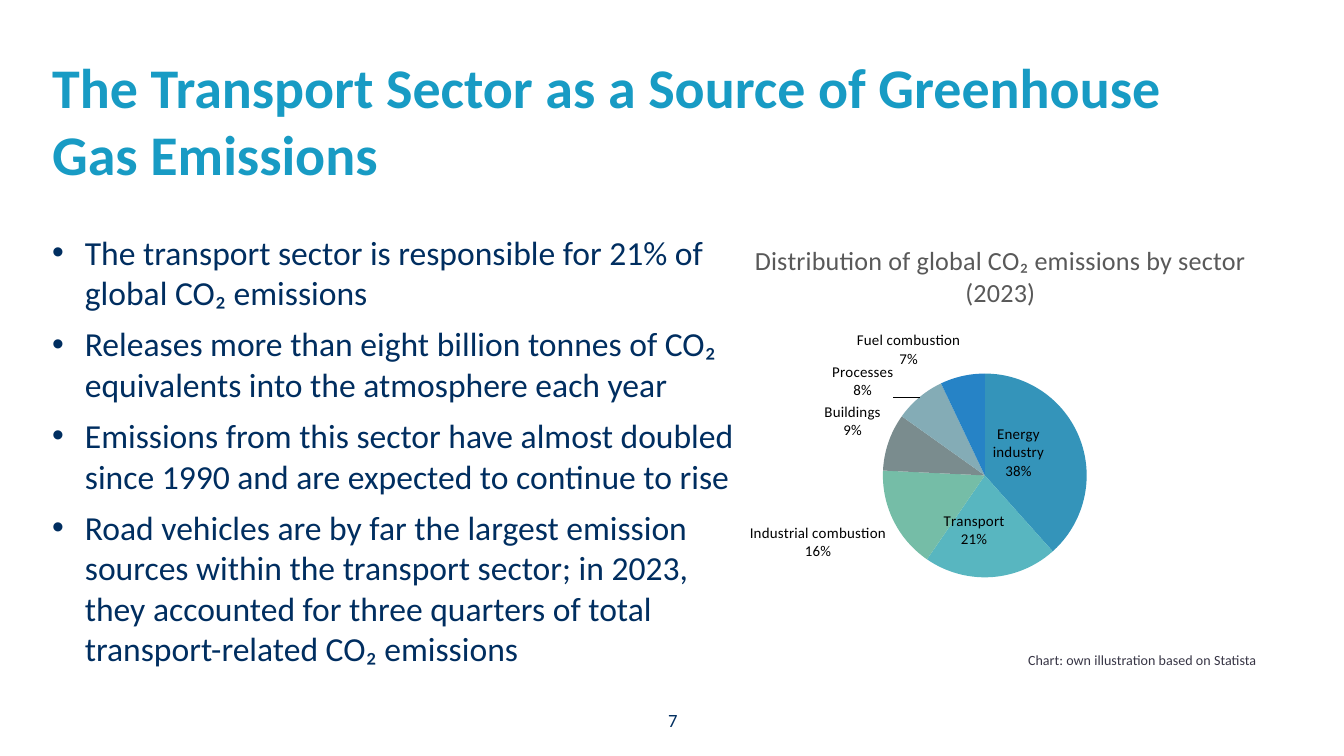
from lxml import etree
from pptx import Presentation
from pptx.chart.data import CategoryChartData
from pptx.dml.color import RGBColor
from pptx.enum import chart as charts, text
from pptx.oxml import parse_xml
from pptx.oxml.ns import nsdecls, qn
from pptx.util import Pt

COLORS = {"title": "189BC4", "body": "002E60", "credit": "373545",
          "heading": "595959", "label": "000000"}
SECTORS = [
    ("Energy industry", 38, "3494BA"),
    ("Transport", 21, "58B6C0"),
    ("Industrial combustion", 16, "75BDA7"),
    ("Buildings", 9, "7A8C8E"),
    ("Processes", 8, "84ACB6"),
    ("Fuel combustion", 7, "2683C6"),
    ("Other sectors", 0, "1F5970"),
]
LABEL_SHIFTS = [(0, -0.02, -0.01, "ctr"), (1, -0.02, 0.01, "ctr"),
                (4, -0.03, 0.02, "outEnd"), (6, 0.22, 0.02, "outEnd")]
LABEL_FLAGS = ('<c:showLegendKey val="0"/><c:showVal val="0"/><c:showCatName val="1"/>'
               '<c:showSerName val="0"/><c:showPercent val="1"/><c:showBubbleSize val="0"/>'
               '<c:separator>\n</c:separator>')


def style(font, size, color, bold=False):
    font.name = "Calibri"
    font.size = Pt(size)
    font.bold = bold
    font.color.rgb = RGBColor.from_string(COLORS[color])


def add_text(box, lines, size, color, bold=False, align=text.PP_ALIGN.LEFT,
             anchor=text.MSO_ANCHOR.TOP, insets=(0, 0)):
    frame = slide.shapes.add_textbox(*map(Pt, box)).text_frame
    frame.word_wrap = True
    frame.vertical_anchor = anchor
    frame.margin_left = frame.margin_right = Pt(insets[0])
    frame.margin_top = frame.margin_bottom = Pt(insets[1])
    frame.text = "\n".join(lines)
    for paragraph in frame.paragraphs:
        paragraph.alignment = align
        for run in paragraph.runs:
            style(run.font, size, color, bold)
    return frame


prs = Presentation()
prs.slide_width, prs.slide_height = Pt(720), Pt(405)
slide = prs.slides.add_slide(prs.slide_layouts[6])

add_text((28, 28, 595.5, 73.5),
         ["The Transport Sector as a Source of Greenhouse Gas Emissions"],
         30, "title", bold=True)

findings = add_text((28, 124, 376.5, 245), [
    "The transport sector is responsible for 21% of global CO₂ emissions",
    "Releases more than eight billion tonnes of CO₂ equivalents into the atmosphere each year",
    "Emissions from this sector have almost doubled since 1990 and are expected to continue to rise",
    "Road vehicles are by far the largest emission sources within the transport sector; "
    "in 2023, they accounted for three quarters of total transport-related CO₂ emissions",
], 18, "body")
for index, finding in enumerate(findings.paragraphs):
    properties = finding._p.get_or_add_pPr()
    properties.set("marL", str(Pt(17.5)))
    properties.set("indent", str(-Pt(17.5)))
    etree.SubElement(properties, qn("a:buFont"), typeface="Arial")
    etree.SubElement(properties, qn("a:buChar"), char="•")
    finding.space_before = Pt(6 if index else 0)

add_text((332, 374.5, 57, 22), ["7"], 10, "body",
         align=text.PP_ALIGN.CENTER, anchor=text.MSO_ANCHOR.MIDDLE)

emissions = CategoryChartData()
emissions.categories = [name for name, share, color in SECTORS]
emissions.add_series("Series 1", [share for name, share, color in SECTORS])
pie = slide.shapes.add_chart(charts.XL_CHART_TYPE.PIE, Pt(350), Pt(116),
                             Pt(370), Pt(227.5), emissions).chart
style(pie.font, 10, "label")
pie.has_legend = False
pie.has_title = True
pie.chart_title.include_in_layout = False
heading = pie.chart_title.text_frame
heading.text = "Distribution of global CO₂ emissions by sector (2023)"
style(heading.paragraphs[0].runs[0].font, 14, "heading")

plot = pie.plots[0]
plot.vary_by_categories = True
sectors = plot.series[0]
for index, (name, share, color) in enumerate(SECTORS):
    fill = sectors.points[index].format.fill
    fill.solid()
    fill.fore_color.rgb = RGBColor.from_string(color)

plot.has_data_labels = True
labels = plot.data_labels
style(labels.font, 8, "label")
label_text = etree.tostring(labels._element.find(qn("c:txPr")), encoding="unicode")
shifted = "".join(
    f'<c:dLbl><c:idx val="{index}"/><c:layout><c:manualLayout><c:x val="{x}"/><c:y val="{y}"/>'
    f'</c:manualLayout></c:layout>{label_text}<c:dLblPos val="{position}"/>{LABEL_FLAGS}</c:dLbl>'
    for index, x, y, position in LABEL_SHIFTS)
sectors._element.find(qn("c:cat")).addprevious(parse_xml(
    f'<c:dLbls {nsdecls("c", "a")}>{shifted}{label_text}<c:dLblPos val="outEnd"/>{LABEL_FLAGS}'
    '<c:showLeaderLines val="1"/></c:dLbls>'))
plot.has_data_labels = False

plot_area = pie._chartSpace.chart.plotArea
for old_layout in plot_area.findall(qn("c:layout")):
    plot_area.remove(old_layout)
plot_area.insert(0, parse_xml(
    f'<c:layout {nsdecls("c")}><c:manualLayout><c:layoutTarget val="inner"/>'
    '<c:xMode val="edge"/><c:yMode val="edge"/><c:x val="0.33"/><c:y val="0.37"/>'
    '<c:w val="0.3"/><c:h val="0.48"/></c:manualLayout></c:layout>'))
title_element = pie.chart_title._element
for old_layout in title_element.findall(qn("c:layout")):
    title_element.remove(old_layout)
title_element.find(qn("c:tx")).addnext(parse_xml(
    f'<c:layout {nsdecls("c")}><c:manualLayout><c:xMode val="edge"/><c:yMode val="edge"/>'
    '<c:x val="0.14"/><c:y val="0.05"/></c:manualLayout></c:layout>'))

add_text((496, 342.5, 182, 22), ["Chart: own illustration based on Statista"],
         7.5, "credit", align=text.PP_ALIGN.RIGHT,
         anchor=text.MSO_ANCHOR.MIDDLE, insets=(5, 3))

prs.save("out.pptx")
